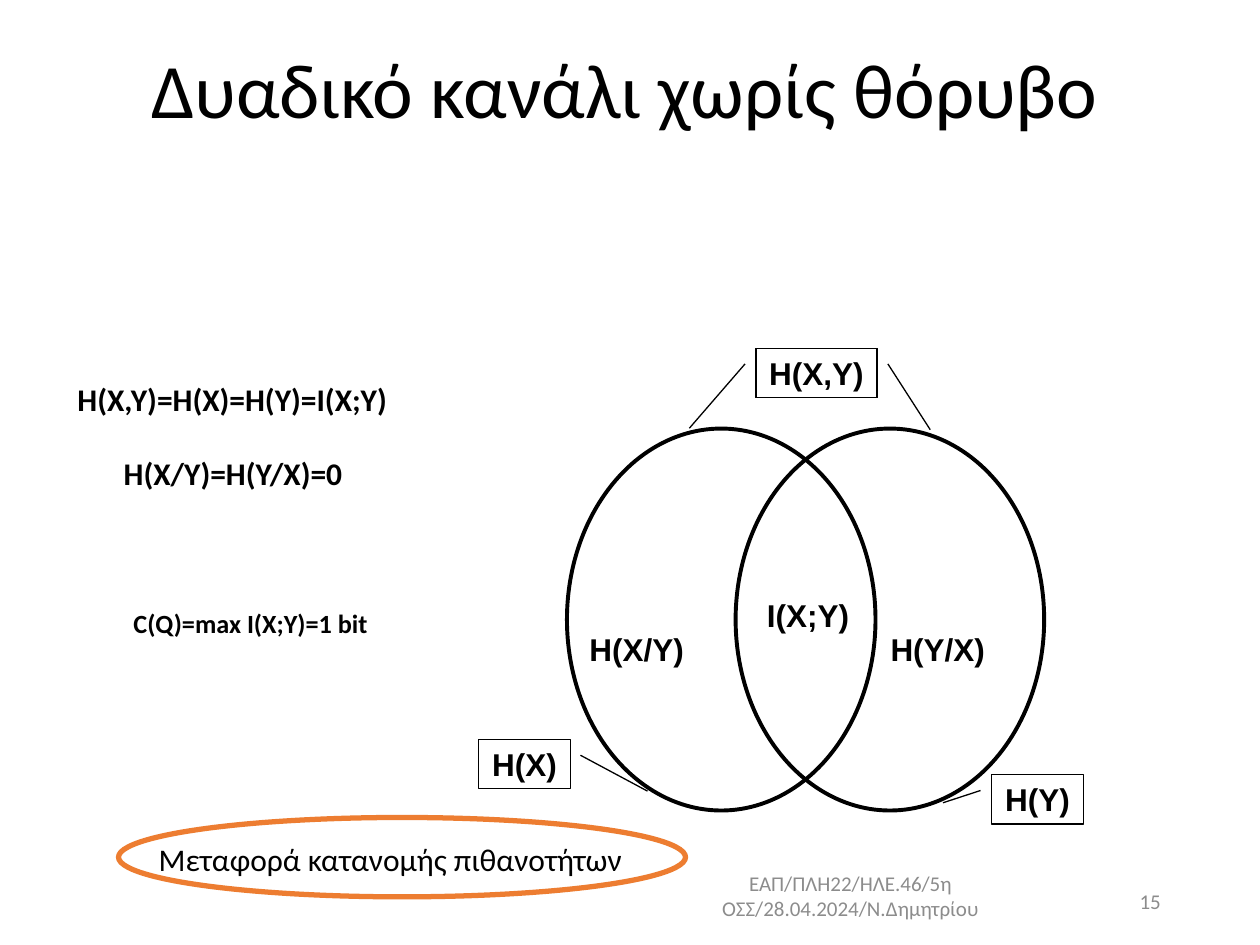
"""Build the slide on the noiseless binary channel."""
from pptx import Presentation
from pptx.dml.color import RGBColor
from pptx.enum import shapes as sh, text as tx
from pptx.util import Cm, Pt

HUES = {"ink": "000000", "grey": "8C8C8C", "ring": "ED7D31"}
LEFT, MID, RIGHT = tx.PP_ALIGN.LEFT, tx.PP_ALIGN.CENTER, tx.PP_ALIGN.RIGHT

deck = Presentation()
deck.slide_width, deck.slide_height = Cm(25.4), Cm(19.05)
slide = deck.slides.add_slide(deck.slide_layouts[6])


def write(shape, words, size, face, bold=False, hue="ink", align=MID):
    frame = shape.text_frame
    frame.text = words
    para = frame.paragraphs[0]
    para.alignment = align
    font = para.runs[0].font
    font.size, font.name, font.bold = Pt(size), face, bold
    font.color.rgb = RGBColor.from_string(HUES[hue])
    return frame


def outline(kind, box, width, hue="ink"):
    shape = slide.shapes.add_shape(kind, *map(Cm, box))
    shape.shadow.inherit = False
    shape.fill.background()
    shape.line.width = Pt(width)
    shape.line.color.rgb = RGBColor.from_string(HUES[hue])
    return shape


blocks = [
    ("ΕΑΠ/ΠΛΗ22/ΗΛΕ.46/5η ΟΣΣ/28.04.2024/Ν.Δημητρίου",
     (12.85, 17.55, 8.59, 1.02), 12, "grey", MID),
    ("15", (17.93, 17.65, 5.72, 1.02), 12, "grey", RIGHT),
    ("Δυαδικό κανάλι χωρίς θόρυβο", (1.17, 0.18, 22.86, 3.18), 44, "ink", MID),
]
for words, box, size, hue, align in blocks:
    area = slide.shapes.add_textbox(*map(Cm, box))
    frame = write(area, words, size, "Calibri", hue=hue, align=align)
    frame.word_wrap = True
    frame.vertical_anchor = tx.MSO_ANCHOR.MIDDLE

for left in (11.43, 14.83):
    outline(sh.MSO_SHAPE.OVAL, (left, 8.64, 6.22, 7.7), 2.25)

calls = [
    ("H(Y)", (19.99, 15.62, 1.85), (0.324, -0.115, 0.568, -0.533)),
    ("H(Χ)", (9.65, 14.91, 1.85), (0.324, 1.115, 1.05, 1.837)),
    ("", (15.24, 7.02, 2.44), (0.324, -0.087, 1.626, -0.55)),
    ("H(Χ,Υ)", (15.24, 7.02, 2.44), (0.324, 1.087, 1.658, 1.441)),
]
for words, (left, top, width), bends in calls:
    call = outline(sh.MSO_SHAPE.LINE_CALLOUT_1, (left, top, width, 0.99), 0.75)
    for spot, bend in enumerate(bends):
        call.adjustments[spot] = round(bend, 2)
    if words:
        frame = write(call, words, 18, "Arial", bold=True)
        frame.vertical_anchor = tx.MSO_ANCHOR.MIDDLE
        frame.margin_left = frame.margin_right = 0
        frame.margin_top = frame.margin_bottom = 0

labels = [
    ("Ι(X;Υ)", (15.21, 11.89, 2.16), "Arial", True, MID),
    ("H(X/Y)", (11.63, 12.57, 2.41), "Arial", True, MID),
    ("Η(Υ/Χ)", (17.7, 12.57, 2.41), "Arial", True, MID),
    ("H(Χ,Υ)=Η(Χ)=H(Y)=I(X;Y)", (1.27, 7.54, 6.83), "Calibri", True, MID),
    ("H(Χ/Υ)=Η(Y/Χ)=0", (2.21, 9.02, 4.98), "Calibri", True, MID),
    ("Μεταφορά κατανομής πιθανοτήτων", (2.95, 16.81, 10.31), "Calibri", False, LEFT),
]
for words, (left, top, width), face, bold, align in labels:
    area = slide.shapes.add_textbox(Cm(left), Cm(top), Cm(width), Cm(1.02))
    write(area, words, 18, face, bold, align=align).word_wrap = False

area = slide.shapes.add_textbox(Cm(2.44), Cm(12.24), Cm(10.16), Cm(0.79))
frame = write(area, "C(Q)=max I(X;Y)=1 bit", 15, "Calibri", True, align=LEFT)
frame.word_wrap = True
frame.paragraphs[0].line_spacing = 0.8

outline(sh.MSO_SHAPE.OVAL, (2.39, 16.48, 11.43, 1.6), 3, "ring")

deck.save("out.pptx")
